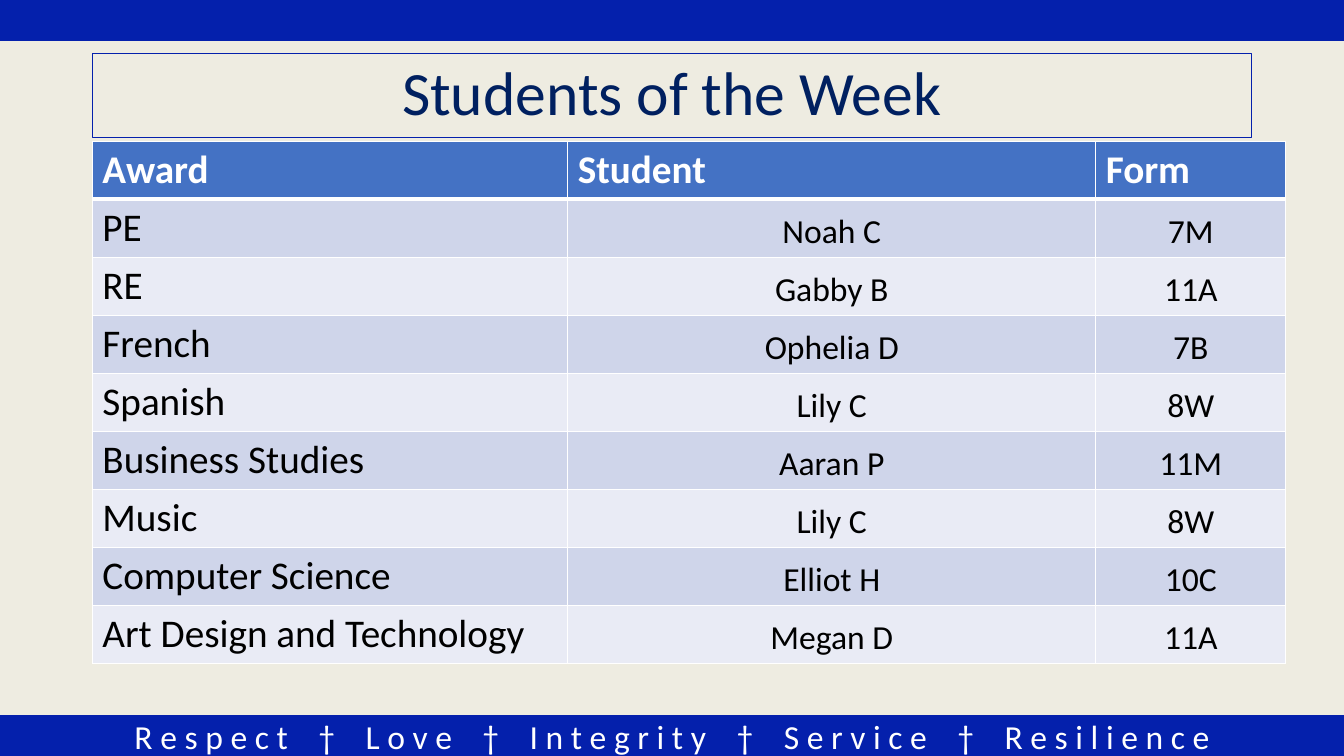
from lxml import etree
from pptx import Presentation
from pptx.dml.color import RGBColor
from pptx.enum.shapes import MSO_SHAPE
from pptx.enum.text import MSO_ANCHOR, PP_ALIGN
from pptx.oxml.ns import qn
from pptx.util import Pt

RECT = MSO_SHAPE.RECTANGLE
MIDDLE, BOTTOM = MSO_ANCHOR.MIDDLE, MSO_ANCHOR.BOTTOM
CENTER = PP_ALIGN.CENTER
FONT = "Calibri"
HEX = {
    "back": "EEECE1", "blue": "0420AC", "navy": "002060", "head": "4472C4",
    "odd": "CFD5EA", "even": "E9EBF5", "white": "FFFFFF", "black": "000000",
}
WIDTH, HEIGHT, BAR = 960, 540, 28.8
GAP = 16.3
VALUES = ["Respect", "Love", "Integrity", "Service", "Resilience"]
COLS = [339.6, 377.1, 135.8]
ROW = 41.4
ROWS = [
    ("Award", "Student", "Form"),
    ("PE", "Noah C", "7M"),
    ("RE", "Gabby B", "11A"),
    ("French", "Ophelia D", "7B"),
    ("Spanish", "Lily C", "8W"),
    ("Business Studies", "Aaran P", "11M"),
    ("Music", "Lily C", "8W"),
    ("Computer Science", "Elliot H", "10C"),
    ("Art Design and Technology", "Megan D", "11A"),
]


def color(name):
    return RGBColor.from_string(HEX[name])


def style(para, size, tint, bold=False):
    for run in para.runs:
        font = run.font
        font.name, font.size, font.bold = FONT, Pt(size), bold
        font.color.rgb = color(tint)


def add_rect(slide, box, fill, weight):
    shape = slide.shapes.add_shape(RECT, *map(Pt, box))
    shape.shadow.inherit = False
    if fill:
        shape.fill.solid()
        shape.fill.fore_color.rgb = color(fill)
    else:
        shape.fill.background()
    shape.line.color.rgb = color("blue")
    shape.line.width = Pt(weight)
    shape.text_frame.vertical_anchor = MIDDLE
    return shape


def add_title(slide, box):
    para = add_rect(slide, box, None, 0.75).text_frame.paragraphs[0]
    para.text = "Students of the Week"
    para.alignment = CENTER
    para.line_spacing = 0.9
    style(para, 44, "navy")


def add_footer(slide, box):
    para = add_rect(slide, box, "blue", 1).text_frame.paragraphs[0]
    para.alignment = CENTER
    for i, word in enumerate(VALUES):
        if i:
            cross = para.add_run()
            cross.text = " †"
            cross.font._element.set("spc", str(round(GAP * 100)))
        para.add_run().text = (" " if i else "") + " ".join(word)
    style(para, 24, "white")


def add_edges(cell, head):
    props = cell._tc.get_or_add_tcPr()
    for i, tag in enumerate(["a:lnL", "a:lnR", "a:lnT", "a:lnB"]):
        weight = 3 if head and tag == "a:lnB" else 1
        edge = etree.Element(qn(tag), w=str(Pt(weight)))
        fill = etree.SubElement(edge, qn("a:solidFill"))
        etree.SubElement(fill, qn("a:srgbClr"), val=HEX["white"])
        props.insert(i, edge)


def fill_cell(cell, text, row, col):
    head = row == 0
    cell.fill.solid()
    cell.fill.fore_color.rgb = color(
        "head" if head else "odd" if row % 2 else "even")
    add_edges(cell, head)
    para = cell.text_frame.paragraphs[0]
    para.text = text
    if head or col == 0:
        style(para, 28, "white" if head else "black", head)
        return
    style(para, 24, "black")
    para.alignment = CENTER
    cell.vertical_anchor = BOTTOM
    cell.margin_left = cell.margin_right = cell.margin_top = Pt(0.75)
    cell.margin_bottom = Pt(3.6)


def add_awards(slide, left, top):
    box = (left, top, sum(COLS), ROW * len(ROWS))
    table = slide.shapes.add_table(len(ROWS), len(COLS), *map(Pt, box)).table
    for col, width in enumerate(COLS):
        table.columns[col].width = Pt(width)
    for row, texts in enumerate(ROWS):
        table.rows[row].height = Pt(ROW)
        for col, text in enumerate(texts):
            fill_cell(table.cell(row, col), text, row, col)


def main():
    deck = Presentation()
    deck.slide_width, deck.slide_height = Pt(WIDTH), Pt(HEIGHT)
    slide = deck.slides.add_slide(deck.slide_layouts[6])
    slide.background.fill.solid()
    slide.background.fill.fore_color.rgb = color("back")
    add_footer(slide, (0, HEIGHT - BAR, WIDTH, BAR))
    add_rect(slide, (0, 0, WIDTH, BAR), "blue", 1)
    add_title(slide, (66, 38.2, 828, 59.8))
    add_awards(slide, 66, 100.8)
    deck.save("out.pptx")


if __name__ == "__main__":
    main()
